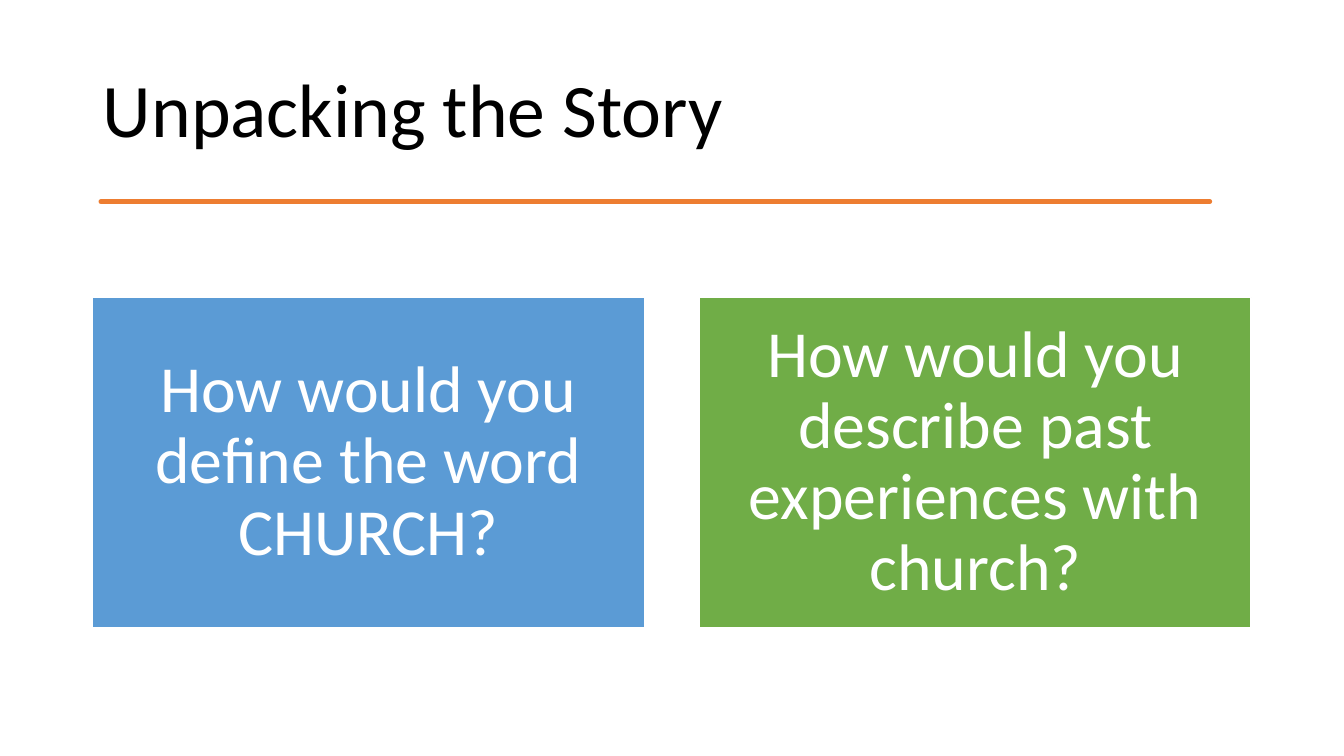
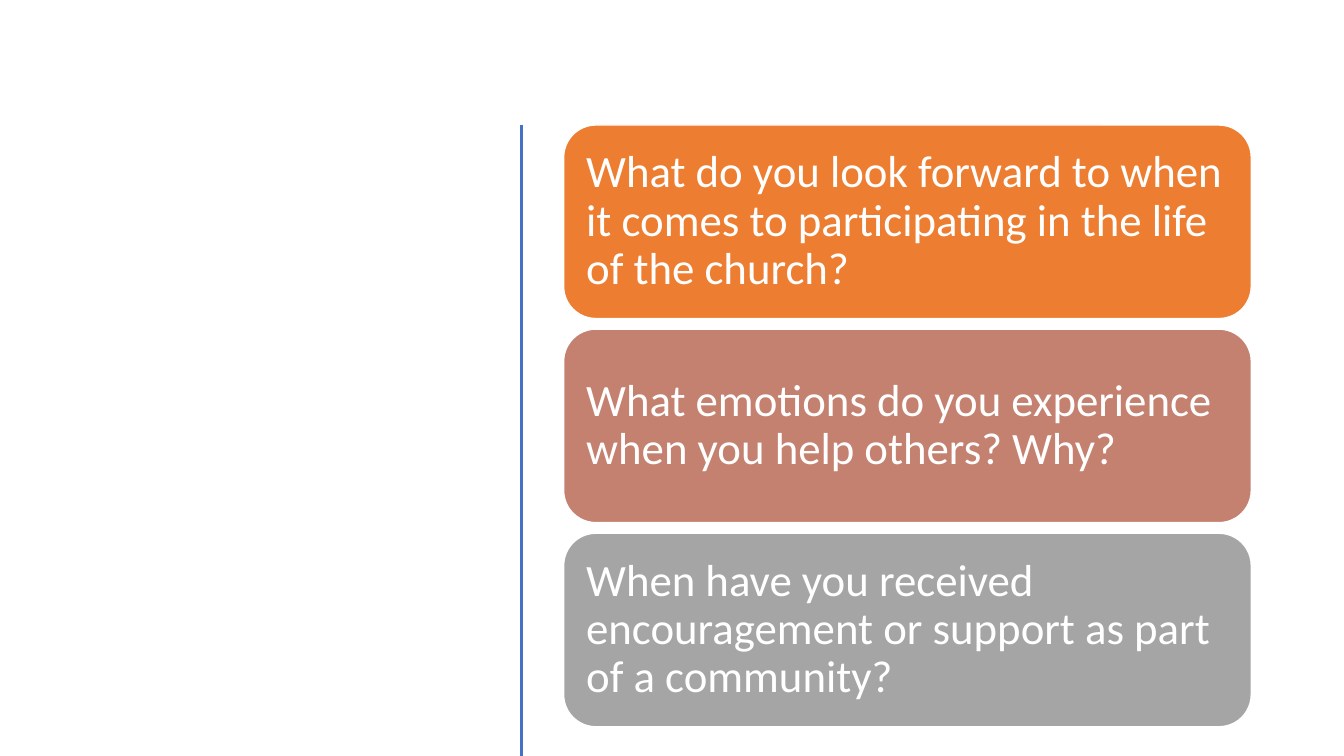
"""Build two discussion slides: a pair of question cards and a stack of three."""
from lxml import etree
from pptx import Presentation, util as u
from pptx.dml.color import RGBColor
from pptx.enum import shapes, text
from pptx.oxml.ns import qn

THEME = {
    "font": "Calibri",
    "title": 54, "pair": 47, "stack": 32,
    "ink": "000000", "paper": "FFFFFF", "accent": "ED7D31", "rule": "4472C4",
    "blue": "5B9BD5", "green": "70AD47", "rose": "C48170", "gray": "A5A5A5",
}
WIDE, HIGH = 13.33, 7.5
EDGE = 0.92

TITLE = "Unpacking the Story"
PAIR = [
    ("How would you define the word CHURCH?", "blue"),
    ("How would you describe past experiences with church?", "green"),
]
STACK = [
    ("What do you look forward to when it comes to participating in the life of the church?", "accent"),
    ("What emotions do you experience when you help others? Why?", "rose"),
    ("When have you received encouragement or support as part of a community?", "gray"),
]
BRUSH = [
    (0.92, 2.04, 2.06), (1.4, 2.03, 2.07), (1.9, 2.04, 2.06), (2.15, 2.05, 2.06),
    (2.4, 2.04, 2.05), (2.75, 2.05, 2.06), (3.3, 2.04, 2.05), (3.7, 2.04, 2.06),
    (4.05, 2.05, 2.08), (4.6, 2.04, 2.06), (5.2, 2.04, 2.06), (5.85, 2.05, 2.07),
    (6.2, 2.04, 2.06), (6.9, 2.03, 2.07), (7.3, 2.04, 2.06), (7.75, 2.05, 2.07),
    (8.15, 2.04, 2.05), (8.6, 2.05, 2.08), (9.0, 2.05, 2.07), (9.4, 2.03, 2.06),
    (10.0, 2.04, 2.06), (10.6, 2.05, 2.07), (11.3, 2.03, 2.08), (11.7, 2.05, 2.06),
    (12.32, 2.04, 2.06),
]


def color(name):
    return RGBColor.from_string(THEME[name])


def write(frame, words, size, ink, align):
    frame.text = words
    frame.word_wrap = True
    frame.auto_size = text.MSO_AUTO_SIZE.NONE
    frame.vertical_anchor = text.MSO_ANCHOR.MIDDLE
    para = frame.paragraphs[0]
    para.alignment = align
    para.line_spacing = 0.9
    para.font.name = THEME["font"]
    para.font.size = u.Pt(THEME[size])
    para.font.color.rgb = color(ink)


def paint(shape, fill, line, width):
    shape.shadow.inherit = False
    shape.fill.solid()
    shape.fill.fore_color.rgb = color(fill)
    shape.line.color.rgb = color(line)
    shape.line.width = u.Pt(width)


def card(slide, kind, box, words, fill, size, pad, align):
    shape = slide.shapes.add_shape(kind, *map(u.Inches, box))
    paint(shape, fill, "paper", 1)
    frame = shape.text_frame
    frame.margin_left = frame.margin_right = u.Inches(pad)
    frame.margin_top = frame.margin_bottom = u.Inches(pad)
    write(frame, words, size, "paper", align)


def brush(slide):
    top = [(x, y) for x, y, _ in BRUSH]
    low = [(x, y) for x, _, y in reversed(BRUSH)]
    pen = slide.shapes.build_freeform(*top[0], scale=u.Inches(1))
    pen.add_line_segments(top[1:] + low, close=True)
    paint(pen.convert_to_shape(), "accent", "accent", 3.25)


def pair(deck):
    slide = deck.slides.add_slide(deck.slide_layouts[5])
    head = slide.shapes.title
    head.left, head.top, head.width, head.height = map(
        u.Inches, (EDGE, 0.4, WIDE - 2 * EDGE, 1.45))
    write(head.text_frame, TITLE, "title", "ink", text.PP_ALIGN.LEFT)
    brush(slide)
    gap = 0.55
    wide = (WIDE - 2 * EDGE - gap) / len(PAIR)
    for i, (words, fill) in enumerate(PAIR):
        box = (EDGE + i * (wide + gap), 2.95, wide, 3.28)
        card(slide, shapes.MSO_SHAPE.RECTANGLE, box, words, fill, "pair", 0.2,
             text.PP_ALIGN.CENTER)


def stack(deck):
    slide = deck.slides.add_slide(deck.slide_layouts[6])
    x, top, left, tall, gap = 5.17, 1.24, 5.59, 1.92, 0.105
    rule = slide.shapes.add_connector(
        shapes.MSO_CONNECTOR.STRAIGHT, *map(u.Inches, (x, top, x, HIGH)))
    rule.line.color.rgb = color("rule")
    rule.line.width = u.Pt(2)
    etree.SubElement(rule._element.spPr, qn("a:effectLst"))
    for i, (words, fill) in enumerate(STACK):
        box = (left, top + i * (tall + gap), WIDE - EDGE - left, tall)
        card(slide, shapes.MSO_SHAPE.ROUNDED_RECTANGLE, box, words, fill, "stack", 0.13,
             text.PP_ALIGN.LEFT)


def main():
    deck = Presentation()
    deck.slide_width, deck.slide_height = u.Inches(WIDE), u.Inches(HIGH)
    pair(deck)
    stack(deck)
    deck.save("out.pptx")


if __name__ == "__main__":
    main()
